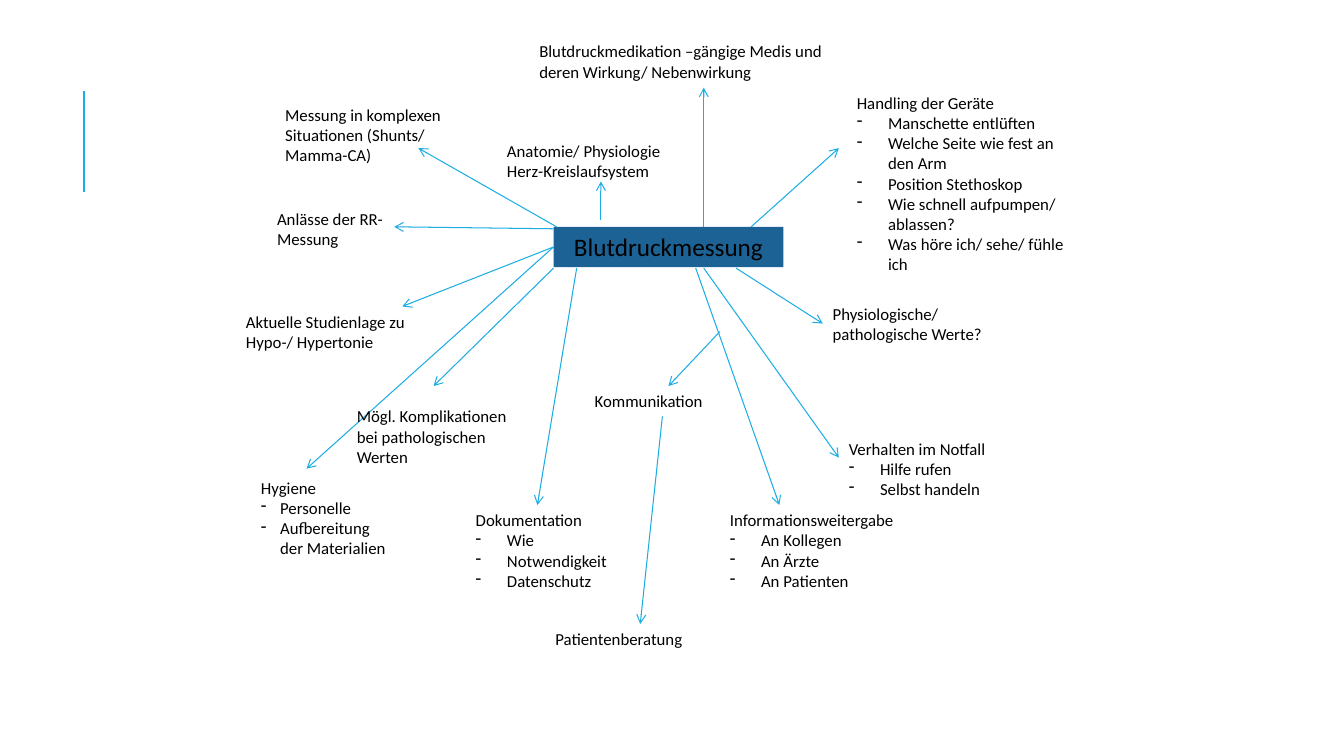
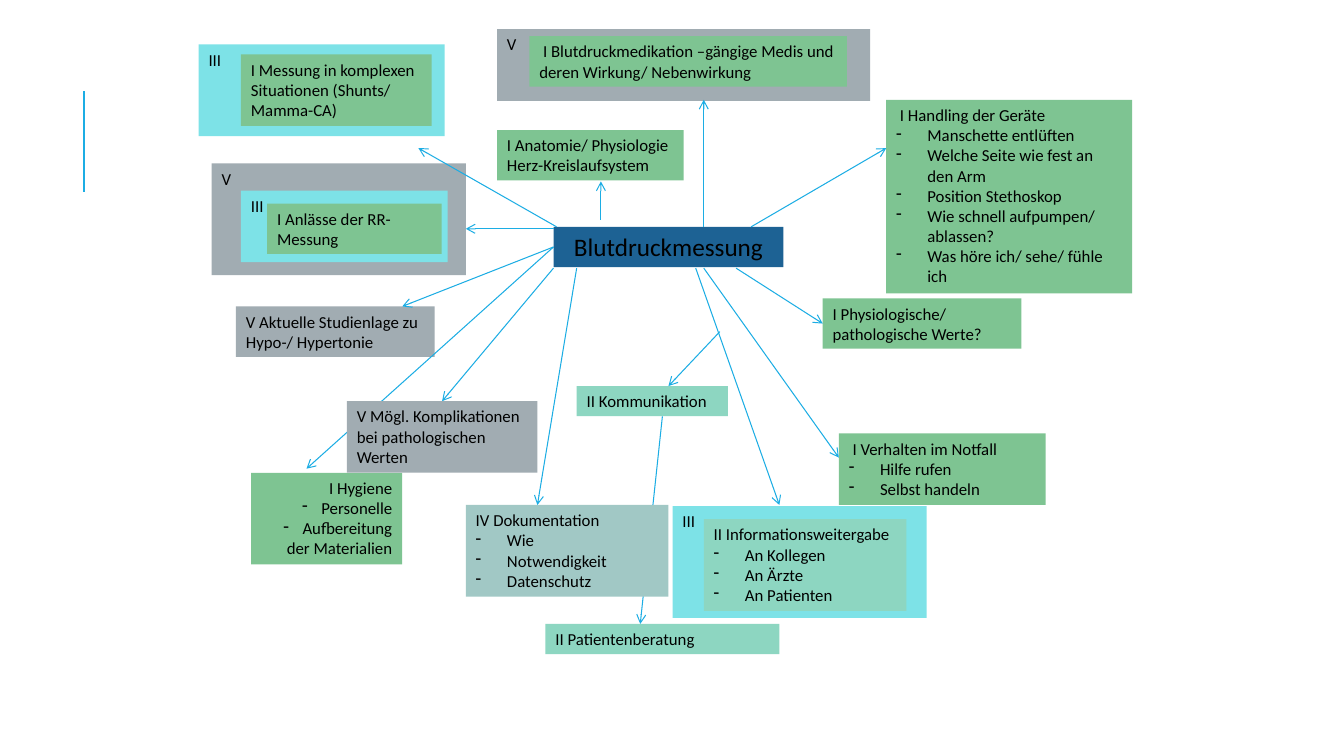
"""Build two mind maps on blood pressure measurement, the second one graded by level."""
import lxml.etree
import pptx
import pptx.dml.color
import pptx.enum.shapes
import pptx.enum.text
import pptx.oxml.ns
import pptx.util

RGBColor = pptx.dml.color.RGBColor
ALIGN = pptx.enum.text.PP_ALIGN
qn = pptx.oxml.ns.qn

BLACK = RGBColor(0x00, 0x00, 0x00)
SKY = RGBColor(0x1C, 0xAD, 0xE4)
NAVY = RGBColor(0x1D, 0x62, 0x94)
GREEN = RGBColor(0x7E, 0xC4, 0x92)
MINT = RGBColor(0x8D, 0xD6, 0xC1)
AQUA = RGBColor(0x7D, 0xE2, 0xE7)
SAGE = RGBColor(0xA1, 0xC8, 0xC5)
GREY = RGBColor(0xA1, 0xAC, 0xB2)
LEVEL_COLORS = {"I": GREEN, "II": MINT, "III": AQUA, "IV": SAGE, "V": GREY}

FONT = "Calibri"
WIDTH, HEIGHT = pptx.util.Inches(13.33), pptx.util.Inches(7.5)
COLUMN, ROW = WIDTH / 1333, HEIGHT / 750
WIDE_INDENT, NARROW_INDENT = 31, 19

HUB = ("Blutdruckmessung", (549, 225, 228, 40))
SIDE_RULE = ((83, 190), (83, 90))

TOPICS = {
    "Medikation": ("Blutdruckmedikation –gängige Medis und deren Wirkung/ Nebenwirkung", []),
    "Handling": ("Handling der Geräte", [
        "Manschette entlüften", "Welche Seite wie fest an den Arm", "Position Stethoskop",
        "Wie schnell aufpumpen/ ablassen?", "Was höre ich/ sehe/ fühle ich"]),
    "Werte": ("Physiologische/ pathologische Werte?", []),
    "Notfall": ("Verhalten im Notfall", ["Hilfe rufen", "Selbst handeln"]),
    "Weitergabe": ("Informationsweitergabe", ["An Kollegen", "An Ärzte", "An Patienten"]),
    "Kommunikation": ("Kommunikation", []),
    "Hygiene": ("Hygiene", ["Personelle", "Aufbereitung der Materialien"]),
    "Studienlage": ("Aktuelle Studienlage zu Hypo-/ Hypertonie", []),
    "Situationen": ("Messung in komplexen Situationen (Shunts/ Mamma-CA)", []),
    "Anatomie": ("Anatomie/ Physiologie Herz-Kreislaufsystem", []),
    "Komplikationen": ("Mögl. Komplikationen bei pathologischen Werten", []),
    "Anlässe": ("Anlässe der RR-Messung", []),
    "Beratung": ("Patientenberatung", []),
    "Dokumentation": ("Dokumentation", ["Wie", "Notwendigkeit", "Datenschutz"]),
}

PLACES = {
    "Medikation": (525, 36, 315, 50),
    "Handling": (840, 87, 244, 192),
    "Werte": (816, 296, 197, 50),
    "Notfall": (832, 430, 205, 71),
    "Weitergabe": (714, 501, 299, 91),
    "Kommunikation": (580, 383, 197, 30),
    "Hygiene": (249, 469, 150, 91),
    "Studienlage": (234, 304, 197, 50),
    "Situationen": (273, 99, 189, 71),
    "Anatomie": (493, 135, 173, 91),
    "Komplikationen": (344, 398, 189, 71),
    "Anlässe": (265, 202, 173, 50),
    "Beratung": (541, 619, 232, 30),
    "Dokumentation": (462, 501, 201, 91),
}
GRADED_PLACES = PLACES | {
    "Handling": (879, 99, 244, 192),
    "Weitergabe": (698, 515, 201, 91),
    "Kommunikation": (572, 383, 150, 30),
    "Situationen": (239, 54, 189, 71),
    "Anatomie": (493, 129, 185, 50),
}

ARROWS = {
    "Medikation": ((698, 225), (698, 87)),
    "Handling": ((745, 225), (832, 147)),
    "Werte": ((730, 266), (816, 321)),
    "Notfall": ((698, 266), (832, 454)),
    "Weitergabe": ((690, 266), (773, 501)),
    "Kommunikation": ((714, 329), (663, 383)),
    "Dokumentation": ((572, 266), (533, 501)),
    "Komplikationen": ((549, 266), (430, 383)),
    "Hygiene": ((549, 246), (304, 465)),
    "Studienlage": ((549, 246), (399, 304)),
    "Anlässe": ((549, 227), (391, 225)),
    "Situationen": ((552, 225), (415, 147)),
    "Anatomie": ((596, 218), (596, 180)),
    "Beratung": ((657, 413), (635, 619)),
}
GRADED_ARROWS = ARROWS | {
    "Medikation": ((698, 225), (698, 99)),
    "Handling": ((745, 225), (879, 147)),
    "Komplikationen": ((549, 266), (438, 398)),
    "Anlässe": ((549, 227), (462, 227)),
}

LEVELS = {
    "Medikation": " I", "Handling": " I", "Werte": "I", "Notfall": " I",
    "Weitergabe": "II", "Kommunikation": "II", "Hygiene": "I", "Studienlage": "V",
    "Situationen": "I", "Anatomie": "I", "Komplikationen": "V", "Anlässe": "I",
    "Beratung": "II", "Dokumentation": "IV",
}
BACK_FRAMES = [
    ("V", (210, 162, 252, 111)),
    ("III", (197, 44, 244, 91)),
    ("III", (667, 502, 252, 111)),
    ("V", (493, 29, 370, 71)),
]
FRONT_FRAMES = [("III", (239, 189, 205, 71))]
FRONT_TOPICS = ["Komplikationen", "Anlässe", "Beratung", "Dokumentation"]
BACK_TOPICS = [topic for topic in TOPICS if topic not in FRONT_TOPICS]

FROM_HUB_SIDE = ["Hygiene", "Studienlage"]
END_SIDES = {"Werte": 1}
GRADED_END_SIDES = END_SIDES | {"Komplikationen": 0}


def on_grid(x, y):
    return round(x * COLUMN), round(y * ROW)


def add_line(slide, ends, weight, arrow=False):
    start, end = ends
    line = slide.shapes.add_connector(
        pptx.enum.shapes.MSO_CONNECTOR.STRAIGHT, *on_grid(*start), *on_grid(*end))
    line.line.color.rgb = SKY
    line.line.width = pptx.util.Pt(weight)
    properties = line._element.spPr
    if arrow:
        lxml.etree.SubElement(properties.find(qn("a:ln")), qn("a:tailEnd"), type="arrow")
    lxml.etree.SubElement(properties, qn("a:effectLst"))
    return line


def add_dash(paragraph, indent):
    properties = paragraph._p.get_or_add_pPr()
    properties.set("marL", str(round(indent * COLUMN)))
    properties.set("indent", str(-round(indent * COLUMN)))
    lxml.etree.SubElement(properties, qn("a:buChar"), char="-")


def add_box(slide, place, heading, points=(), fill=None, size=12,
            align=ALIGN.LEFT, indent=WIDE_INDENT):
    area = on_grid(*place[:2]) + on_grid(*place[2:])
    if fill is None:
        box = slide.shapes.add_textbox(*area)
    else:
        box = slide.shapes.add_shape(pptx.enum.shapes.MSO_SHAPE.RECTANGLE, *area)
        box.shadow.inherit = False
        box.fill.solid()
        box.fill.fore_color.rgb = fill
        box.line.fill.background()
    frame = box.text_frame
    frame.word_wrap = True
    frame.vertical_anchor = pptx.enum.text.MSO_ANCHOR.TOP
    for number, text in enumerate([heading, *points]):
        paragraph = frame.add_paragraph() if number else frame.paragraphs[0]
        paragraph.text = text
        paragraph.alignment = align
        paragraph.font.name = FONT
        paragraph.font.size = pptx.util.Pt(size)
        paragraph.font.color.rgb = BLACK
        if number:
            add_dash(paragraph, indent)
    return box


def add_frames(slide, frames):
    for level, place in frames:
        add_box(slide, place, level, fill=LEVEL_COLORS[level])


def add_topics(slide, topics, places, graded):
    boxes = {}
    for topic in topics:
        heading, points = TOPICS[topic]
        fill, align = None, ALIGN.LEFT
        if graded:
            heading = f"{LEVELS[topic]} {heading}"
            fill = LEVEL_COLORS[LEVELS[topic].strip()]
            align = ALIGN.RIGHT if topic == "Hygiene" else ALIGN.LEFT
        indent = NARROW_INDENT if topic == "Hygiene" else WIDE_INDENT
        boxes[topic] = add_box(slide, places[topic], heading, points, fill,
                               align=align, indent=indent)
    return boxes


def add_map(deck, places, arrows, end_sides, graded):
    slide = deck.slides.add_slide(deck.slide_layouts[6])
    add_line(slide, SIDE_RULE, 1.5)
    if graded:
        add_frames(slide, BACK_FRAMES)
    title, hub_place = HUB
    hub = add_box(slide, hub_place, title, fill=NAVY, size=18, align=ALIGN.CENTER)
    boxes = add_topics(slide, BACK_TOPICS, places, graded)
    lines = {topic: add_line(slide, ends, 0.75, arrow=True) for topic, ends in arrows.items()}
    if graded:
        add_frames(slide, FRONT_FRAMES)
    boxes |= add_topics(slide, FRONT_TOPICS, places, graded)
    for topic in FROM_HUB_SIDE:
        lines[topic].begin_connect(hub, 1)
    for topic, side in end_sides.items():
        lines[topic].end_connect(boxes[topic], side)


def main():
    deck = pptx.Presentation()
    deck.slide_width, deck.slide_height = WIDTH, HEIGHT
    add_map(deck, PLACES, ARROWS, END_SIDES, graded=False)
    add_map(deck, GRADED_PLACES, GRADED_ARROWS, GRADED_END_SIDES, graded=True)
    deck.save("out.pptx")


if __name__ == "__main__":
    main()
